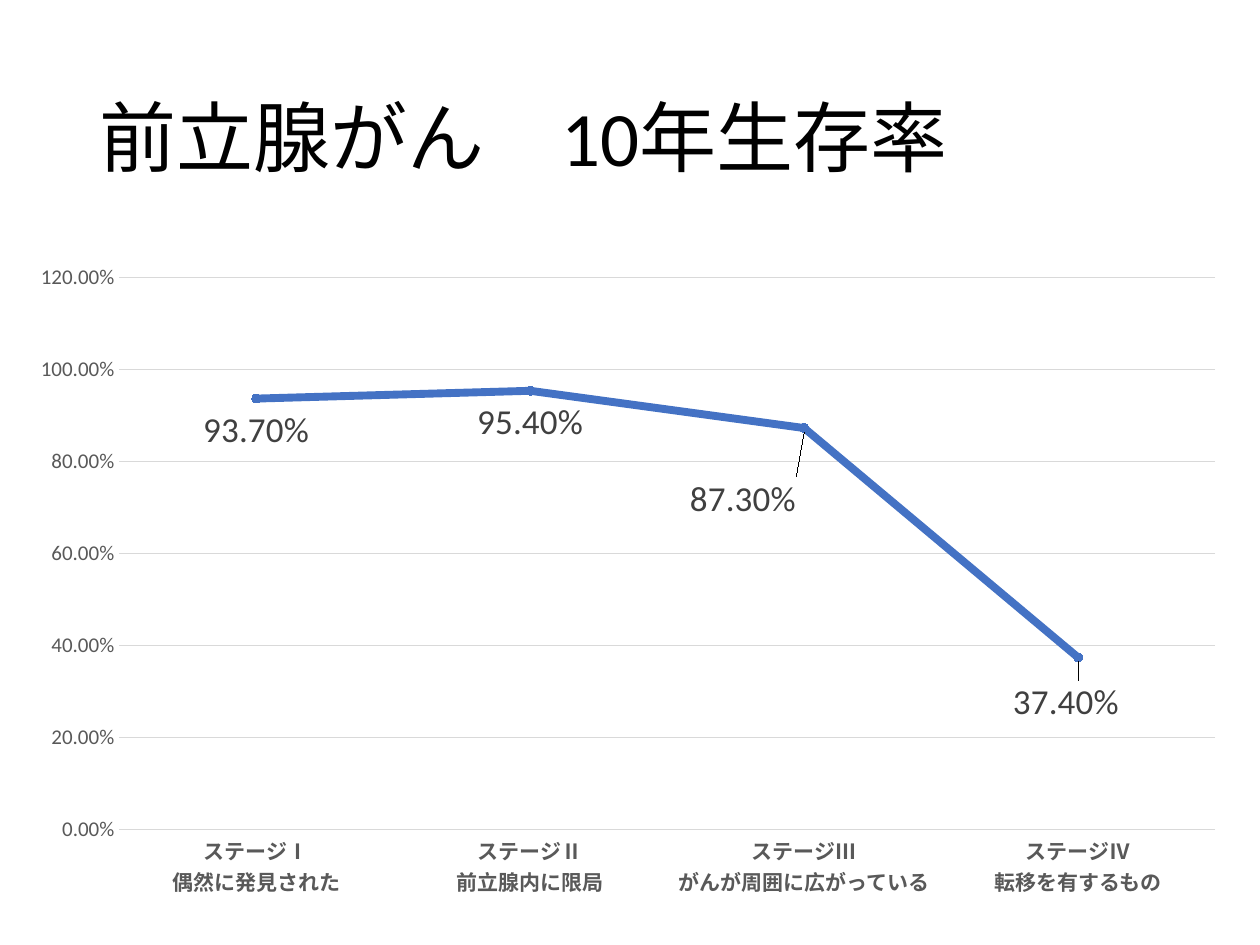
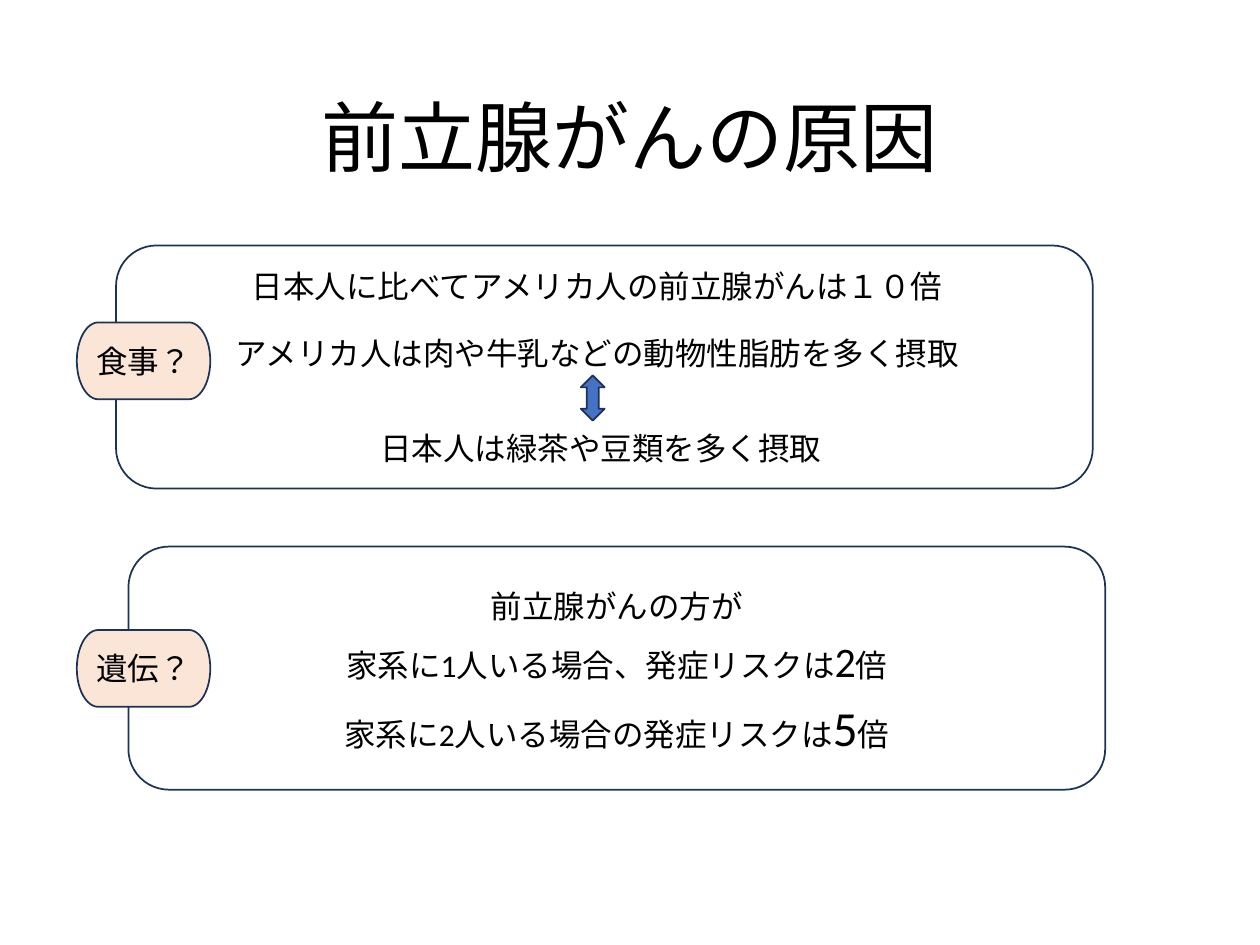
"""Builds two slides on prostate cancer: ten-year survival and suspected causes."""
from lxml import etree
from pptx import Presentation
from pptx.chart.data import CategoryChartData
from pptx.dml.color import RGBColor
from pptx.enum.chart import XL_CHART_TYPE as ChartType
from pptx.enum.chart import XL_LABEL_POSITION as LabelPosition
from pptx.enum.chart import XL_MARKER_STYLE as Marker
from pptx.enum.chart import XL_TICK_MARK as Tick
from pptx.enum.lang import MSO_LANGUAGE_ID as Language
from pptx.enum.shapes import MSO_SHAPE as Shape
from pptx.enum.text import MSO_ANCHOR as Anchor
from pptx.enum.text import PP_ALIGN as Align
from pptx.oxml.ns import qn
from pptx.util import Cm, Pt

FONT = "Calibri"
COLORS = {
    "text": "000000",
    "outline": "1E3256",
    "accent": "4472C4",
    "tag": "FBE5D6",
    "axis": "595959",
    "label": "404040",
    "grid": "D9D9D9",
}
PERCENT = "0.00%"
TITLE_ONLY = 5
BODY_SIZE = 18

SURVIVAL = {
    "ステージⅠ\n偶然に発見された": 0.937,
    "ステージⅡ\n前立腺内に限局": 0.954,
    "ステージⅢ\nがんが周囲に広がっている": 0.873,
    "ステージⅣ\n転移を有するもの": 0.374,
}
LABEL_SHIFTS = {2: (-0.05, 0.06), 3: (-0.01, 0.02)}

DIET_LINES = [
    ("日本人に比べてアメリカ人の前立腺がんは１０倍", 4.83, 5.26, 14.73),
    ("アメリカ人は肉や牛乳などの動物性脂肪を多く摂取", 4.5, 6.6, 15.4),
    ("日本人は緑茶や豆類を多く摂取", 7.42, 8.53, 12.7),
]
HEREDITY_LINES = [
    [("前立腺がんの方が", BODY_SIZE)],
    [("家系に1人いる場合、発症リスクは", BODY_SIZE), ("2", 24), ("倍", BODY_SIZE)],
    [("家系に2人いる場合の発症リスクは", BODY_SIZE), ("5", 28), ("倍", BODY_SIZE)],
]


def rgb(name):
    """Return the named palette colour."""
    return RGBColor.from_string(COLORS[name])


def style_font(font, size, color="text", bold=False):
    """Give a font the deck's typeface with a size and colour."""
    font.name, font.size, font.bold = FONT, Pt(size), bold
    font.color.rgb = rgb(color)


def style_runs(paragraph, size):
    """Format every run of a Japanese paragraph."""
    for run in paragraph.runs:
        style_font(run.font, size)
        run.font.language_id = Language.JAPANESE


def style_line(line, color, width):
    """Set a line's colour and width in points."""
    line.color.rgb, line.width = rgb(color), Pt(width)


def add_titled_slide(deck, heading, align):
    """Add a title-only slide and format its heading."""
    slide = deck.slides.add_slide(deck.slide_layouts[TITLE_ONLY])
    title = slide.shapes.title
    title.left, title.top, title.width, title.height = Cm(1.75), Cm(1.02), Cm(21.9), Cm(3.68)
    title.text_frame.text = heading
    title.text_frame.vertical_anchor = Anchor.MIDDLE
    paragraph = title.text_frame.paragraphs[0]
    paragraph.alignment, paragraph.line_spacing = align, 0.9
    style_runs(paragraph, 44)
    return slide


def shift_label(label_element, shift):
    """Move a data label by fractions of the chart size."""
    layout = etree.Element(qn("c:layout"))
    manual = etree.SubElement(layout, qn("c:manualLayout"))
    for axis, offset in zip("xy", shift):
        etree.SubElement(manual, qn(f"c:{axis}")).set("val", str(offset))
    label_element.find(qn("c:idx")).addnext(layout)


def style_axes(chart):
    """Format the stage axis and the survival axis."""
    stages, rates = chart.category_axis, chart.value_axis
    for axis in (stages, rates):
        axis.major_tick_mark = axis.minor_tick_mark = Tick.NONE
        style_font(axis.tick_labels.font, 12, "axis", bold=axis is stages)
    style_line(stages.format.line, "grid", 0.75)
    rates.format.line.fill.background()
    style_line(rates.major_gridlines.format.line, "grid", 0.75)
    rates.minimum_scale, rates.maximum_scale, rates.major_unit = 0, 1.2, 0.2
    rates.tick_labels.number_format = PERCENT
    rates.tick_labels.number_format_is_linked = False


def style_survival(survival):
    """Format the survival line, its markers and its labels."""
    survival.smooth = False
    style_line(survival.format.line, "accent", 4.5)
    survival.marker.style, survival.marker.size = Marker.CIRCLE, 5
    survival.marker.format.fill.solid()
    survival.marker.format.fill.fore_color.rgb = rgb("accent")
    style_line(survival.marker.format.line, "accent", 0.75)
    labels = survival.data_labels
    labels.show_value, labels.position = True, LabelPosition.BELOW
    labels.number_format, labels.number_format_is_linked = PERCENT, False
    style_font(labels.font, 20, "label")
    for index in LABEL_SHIFTS:
        label = survival.points[index].data_label
        style_font(label.font, 20, "label")
        label.position = LabelPosition.BELOW
    moved = labels._element.findall(qn("c:dLbl"))
    for label_element, shift in zip(moved, LABEL_SHIFTS.values()):
        shift_label(label_element, shift)


def add_survival_chart(slide):
    """Add the line chart of survival by stage."""
    figures = CategoryChartData(number_format=PERCENT)
    figures.categories = list(SURVIVAL)
    figures.add_series("Series 1", list(SURVIVAL.values()))
    chart = slide.shapes.add_chart(
        ChartType.LINE_MARKERS, Cm(0.33), Cm(5.08), Cm(24.66), Cm(13.28), figures
    ).chart
    chart.has_title = chart.has_legend = False
    style_font(chart.font, 10)
    chart.plots[0].vary_by_categories = False
    style_axes(chart)
    style_survival(chart.plots[0].series[0])


def add_outlined(slide, kind, left, top, width, height, fill=None):
    """Add an outlined preset shape, filled when a colour is named."""
    shape = slide.shapes.add_shape(kind, Cm(left), Cm(top), Cm(width), Cm(height))
    shape.shadow.inherit = False
    if fill:
        shape.fill.solid()
        shape.fill.fore_color.rgb = rgb(fill)
    else:
        shape.fill.background()
    style_line(shape.line, "outline", 1)
    return shape


def add_panel(slide, left, top):
    """Add a rounded panel for one suspected cause."""
    return add_outlined(slide, Shape.ROUNDED_RECTANGLE, left, top, 19.69, 4.9)


def add_tag(slide, cause, top):
    """Add the tag that names a cause."""
    tag = add_outlined(slide, Shape.FLOWCHART_TERMINATOR, 1.55, top, 2.69, 1.55, "tag")
    frame = tag.text_frame
    frame.text, frame.word_wrap = cause, False
    frame.vertical_anchor = Anchor.MIDDLE
    frame.paragraphs[0].alignment = Align.CENTER
    style_runs(frame.paragraphs[0], BODY_SIZE)


def add_statement(slide, statement, left, top, width):
    """Add one line of body text."""
    frame = slide.shapes.add_textbox(Cm(left), Cm(top), Cm(width), Cm(1.02)).text_frame
    frame.word_wrap, frame.text = True, statement
    style_runs(frame.paragraphs[0], BODY_SIZE)


def write_risks(panel):
    """Write the hereditary risks with enlarged multipliers."""
    frame = panel.text_frame
    frame.word_wrap, frame.vertical_anchor = True, Anchor.MIDDLE
    for index, parts in enumerate(HEREDITY_LINES):
        paragraph = frame.add_paragraph() if index else frame.paragraphs[0]
        paragraph.alignment, paragraph.line_spacing = Align.CENTER, 1.2
        for words, size in parts:
            run = paragraph.add_run()
            run.text = words
            run.font.language_id = Language.JAPANESE
            style_font(run.font, size)


def main():
    """Build and save the deck."""
    deck = Presentation()
    deck.slide_width, deck.slide_height = Cm(25.4), Cm(19.05)

    survival_slide = add_titled_slide(deck, "前立腺がん　10年生存率", Align.LEFT)
    add_survival_chart(survival_slide)

    causes_slide = add_titled_slide(deck, "前立腺がんの原因", Align.CENTER)
    add_panel(causes_slide, 2.34, 4.95)
    for statement in DIET_LINES:
        add_statement(causes_slide, *statement)
    add_outlined(causes_slide, Shape.UP_DOWN_ARROW, 11.71, 7.57, 0.48, 0.91, "accent")
    write_risks(add_panel(causes_slide, 2.59, 11.02))
    add_tag(causes_slide, "食事？", 6.5)
    add_tag(causes_slide, "遺伝？", 12.7)

    deck.save("out.pptx")


if __name__ == "__main__":
    main()
